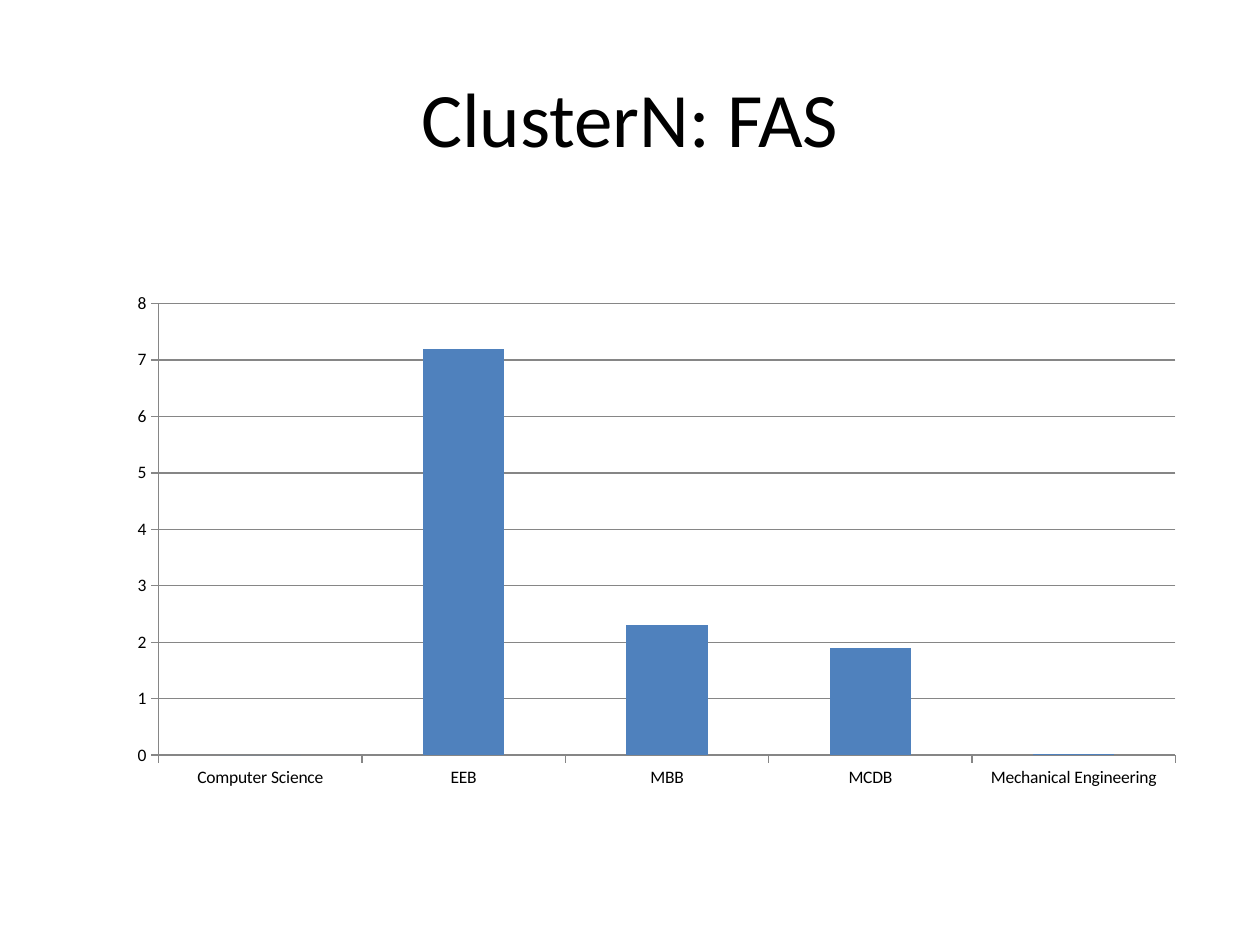
from pptx import Presentation
from pptx.chart.data import CategoryChartData
from pptx.dml.color import RGBColor
from pptx.enum import chart as ch, text
from pptx.util import Inches, Pt

TITLE = "ClusterN: FAS"
SHARES = {
    "Computer Science": 0,
    "EEB": 7.2,
    "MBB": 2.3,
    "MCDB": 1.9,
    "Mechanical Engineering": 0.02,
}
FONT = "Calibri"
BLACK, BLUE, GREY = "000000", "4F81BD", "868686"


def box(*lengths):
    return [Inches(v) for v in lengths]


def style_font(font, size, color=BLACK):
    font.name, font.size, font.bold = FONT, Pt(size), False
    font.color.rgb = RGBColor.from_string(color)


def style_line(line, color=GREY):
    line.color.rgb = RGBColor.from_string(color)
    line.width = Pt(0.75)


def add_title(s):
    title = s.shapes.title
    title.left, title.top, title.width, title.height = box(0.5, 0.3, 9, 1.25)
    tf = title.text_frame
    tf.text = TITLE
    tf.vertical_anchor = text.MSO_ANCHOR.MIDDLE
    p = tf.paragraphs[0]
    p.alignment = text.PP_ALIGN.CENTER
    style_font(p.runs[0].font, 44)


def add_column_chart(s):
    data = CategoryChartData()
    data.categories = list(SHARES)
    data.add_series("Series 1", list(SHARES.values()))
    chart = s.shapes.add_chart(
        ch.XL_CHART_TYPE.COLUMN_CLUSTERED, *box(0.92, 2.25, 8.58, 4.08), data
    ).chart
    chart.has_title = chart.has_legend = False
    style_font(chart.font, 10)

    plot = chart.plots[0]
    plot.gap_width = 150
    plot.vary_by_categories = False
    fill = plot.series[0].format.fill
    fill.solid()
    fill.fore_color.rgb = RGBColor.from_string(BLUE)

    for axis in (chart.category_axis, chart.value_axis):
        axis.major_tick_mark = ch.XL_TICK_MARK.OUTSIDE
        axis.minor_tick_mark = ch.XL_TICK_MARK.NONE
        style_line(axis.format.line)
    values = chart.value_axis
    values.minimum_scale, values.maximum_scale, values.major_unit = 0, 8, 1
    values.tick_labels.number_format = "0"
    values.tick_labels.number_format_is_linked = False
    values.has_major_gridlines = True
    style_line(values.major_gridlines.format.line)


def main():
    prs = Presentation()
    prs.slide_width, prs.slide_height = box(10, 7.5)
    s = prs.slides.add_slide(prs.slide_layouts[5])
    add_title(s)
    add_column_chart(s)
    prs.save("out.pptx")


if __name__ == "__main__":
    main()
